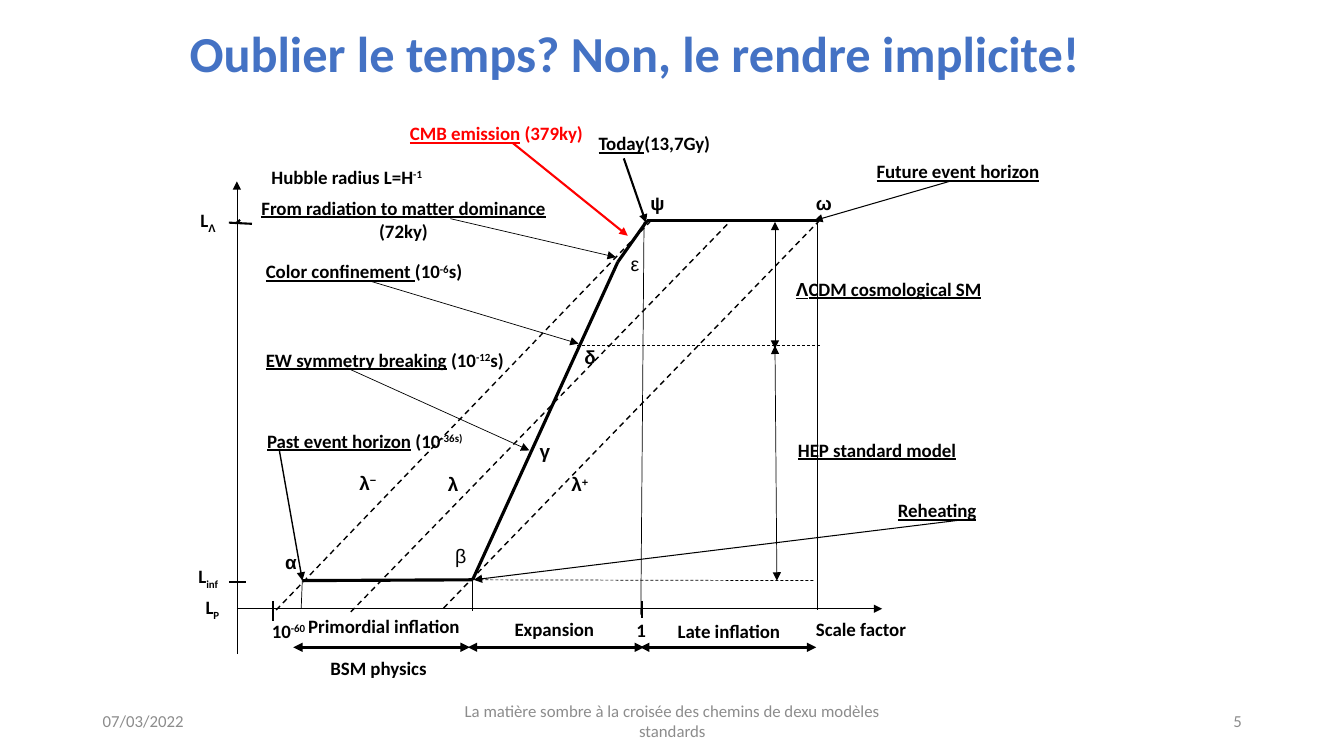
import pptx
import pptx.dml.color
import pptx.enum.dml
import pptx.enum.shapes
import pptx.enum.text
import pptx.oxml
import pptx.oxml.ns
import pptx.util

COLORS = {"ink": "000000", "title": "4472C4", "alert": "FF0000", "footer": "8C8C8C"}
UNIT = 2.54  # centimetres per layout unit
LEFT = pptx.enum.text.PP_ALIGN.LEFT
CENTER = pptx.enum.text.PP_ALIGN.CENTER
RIGHT = pptx.enum.text.PP_ALIGN.RIGHT
BASELINES = {"^": "30000", "_": "-25000"}


def length(value):
    return pptx.util.Cm(round(value * UNIT, 2))


def color(name):
    return pptx.dml.color.RGBColor.from_string(COLORS[name])


def add_runs(paragraph, runs, size, ink, bold):
    """Each run is (text, flags): u underlined, ^ raised, _ lowered, a Arial."""
    for text, flags in runs:
        run = paragraph.add_run()
        run.text = text
        run.font.name = "Arial" if "a" in flags else "Calibri"
        run.font.size = pptx.util.Pt(size)
        run.font.bold = bold
        run.font.color.rgb = color(ink)
        if "u" in flags:
            run.font.underline = True
        for mark, offset in BASELINES.items():
            if mark in flags:
                run._r.get_or_add_rPr().set("baseline", offset)


def add_text(slide, box, runs, align=LEFT, size=13.5, ink="ink", bold=True):
    shape = slide.shapes.add_textbox(*map(length, box))
    shape.text_frame.word_wrap = True
    paragraph = shape.text_frame.paragraphs[0]
    paragraph.alignment = align
    add_runs(paragraph, runs, size, ink, bold)
    return shape


def add_line(slide, box, start, end, width=0.5, ink="ink", heads="", dashed=False):
    """Heads: '>' puts an arrowhead at the end, '<>' at both ends."""
    left, top = box[:2]
    connector = slide.shapes.add_connector(
        pptx.enum.shapes.MSO_CONNECTOR.STRAIGHT,
        length(left + start[0]), length(top + start[1]),
        length(left + end[0]), length(top + end[1]))
    connector.line.color.rgb = color(ink)
    connector.line.width = pptx.util.Pt(width)
    if dashed:
        connector.line.dash_style = pptx.enum.dml.MSO_LINE.DASH
    line = connector.line._get_or_add_ln()
    for mark, tag in (("<", "a:headEnd"), (">", "a:tailEnd")):
        if mark in heads:
            line.append(pptx.oxml.parse_xml(
                f'<{tag} {pptx.oxml.ns.nsdecls("a")} type="triangle"/>'))
    connector._element.spPr.append(
        pptx.oxml.parse_xml(f'<a:effectLst {pptx.oxml.ns.nsdecls("a")}/>'))


def add_labels(slide, box, labels, align):
    for left, top, width, runs in labels:
        add_text(slide, (box[0] + left, box[1] + top, width, 0.33), runs, align)


def add_title(slide, box):
    title = slide.shapes.title
    title.left, title.top, title.width, title.height = map(length, box)
    title.text_frame.vertical_anchor = pptx.enum.text.MSO_ANCHOR.TOP
    paragraph = title.text_frame.paragraphs[0]
    paragraph.alignment = CENTER
    add_runs(paragraph, [("Oublier le temps? Non, le rendre implicite!", "")], 36, "title", True)


def add_axes(slide, box):
    add_line(slide, box, (1.35, 5.49), (1.35, 0.8), heads=">")
    add_line(slide, box, (1.35, 5.04), (7.75, 5.04), heads=">")
    # Ticks
    for start, end, width in [
        ((1.38, 1.18), (1.35, 1.21), 1.5),
        ((1.27, 1.21), (1.5, 1.22), 1.5),
        ((1.27, 4.77), (1.44, 4.77), 1.5),
        ((1.71, 4.96), (1.71, 5.16), 1),
        ((5.37, 4.96), (5.37, 5.13), 1.5),
    ]:
        add_line(slide, box, start, end, width)
    # Axis names and tick labels
    add_labels(slide, box, [
        (1.5, 0.59, 1.88, [("Hubble radius L=H", ""), ("-1", "^")]),
        (6.6, 5.08, 1.89, [("Scale factor", "")]),
        (4.53, 5.09, 1.66, [("1", "")]),
    ], CENTER)
    add_labels(slide, box, [
        (0.89, 1.02, 0.49, [("L", ""), ("Λ", "a_")]),
        (0.87, 4.55, 0.49, [("L", ""), ("inf", "_")]),
        (0.94, 4.86, 0.49, [("L", ""), ("P", "_")]),
        (1.6, 5.1, 0.91, [("10", ""), ("-60", "^")]),
    ], LEFT)


def add_curve(slide, box):
    alpha, beta, epsilon = (2, 4.76), (3.69, 4.75), (5.13, 1.6)
    psi, omega = (5.42, 1.19), (7.11, 1.19)
    corners = [alpha, beta, epsilon, psi, omega]
    for start, end in zip(corners, corners[1:]):
        add_line(slide, box, start, end, 2.25)
    # Wavelength diagonals
    for start, end in [((1.74, 5.05), (5.45, 1.2)), ((2.48, 5.07), (6.22, 1.22)),
                       ((3.4, 5.03), (7.13, 1.19))]:
        add_line(slide, box, start, end, 1, dashed=True)
    # Drop lines and levels
    for start, end in [((2, 4.74), (1.99, 5.04)), ((3.69, 4.72), (3.69, 5.06)),
                       ((5.39, 1.2), (5.36, 5.1)), ((7.11, 1.17), (7.11, 5.05))]:
        add_line(slide, box, start, end)
    for start, end in [((4.73, 2.43), (7.14, 2.43)), ((3.62, 4.75), (7.08, 4.76))]:
        add_line(slide, box, start, end, dashed=True)
    # Greek letters
    add_labels(slide, box, [
        (left, top, 0.37, [(letter, "a")]) for letter, left, top in [
            ("α", 1.7, 4.41), ("γ", 4.22, 3.31), ("δ", 4.67, 2.38),
            ("ψ", 5.34, 0.85), ("ω", 6.99, 0.85), ("λ", 3.31, 3.64)]
    ] + [
        (2.41, 3.63, 0.48, [("λ", "a"), ("−", "a^")]),
        (4.52, 3.64, 0.47, [("λ", "a"), ("+", "a^")]),
    ], CENTER)
    for letter, left, top in [("ε", 5.11, 1.45), ("β", 3.38, 4.35)]:
        add_text(slide, (box[0] + left, box[1] + top, 0.38, 0.34),
                 [(letter, "a")], CENTER, 14, bold=False)


def add_periods(slide, box):
    for start in (1.91, 3.64, 5.35):
        add_line(slide, box, (start, 5.42), (start + 1.75, 5.42), 2.25, heads="<>")
    add_labels(slide, box, [
        (1.91, 5.05, 1.8, [("Primordial inflation", "")]),
        (3.67, 5.08, 1.66, [("Expansion", "")]),
        (5.4, 5.1, 1.66, [("Late inflation", "")]),
        (2, 5.46, 1.51, [("BSM physics", "")]),
    ], CENTER)
    # Ranges of the two models
    add_line(slide, box, (6.69, 1.2), (6.69, 2.46), heads="<>")
    add_line(slide, box, (6.69, 2.43), (6.71, 4.76), heads="<>")
    add_labels(slide, box, [
        (6.8, 1.7, 2.22, [("Λ", "au"), ("CDM cosmological SM", "u")]),
        (6.82, 3.3, 1.9, [("HEP standard model", "u")]),
    ], LEFT)


def add_events(slide, box):
    add_labels(slide, box, [
        (1.55, 3.21, 2.18, [("Past event horizon", "u"), (" (10", ""), ("-36s)", "^")]),
        (1.54, 2.41, 2.8, [("EW symmetry breaking", "u"), (" (10", ""), ("-12", "^"), ("s)", "")]),
        (1.54, 1.53, 2.37, [("Color confinement ", "u"), ("(10", ""), ("-6", "^"), ("s)", "")]),
        (7.6, 0.54, 1.9, [("Future event horizon", "u")]),
        (7.81, 3.9, 1.9, [("Reheating", "u")]),
    ], LEFT)
    add_labels(slide, box, [
        (1.32, 0.9, 3.37, [("From radiation to matter dominance ", "u"), ("(72ky)", "")]),
        (4.66, 0.26, 1.66, [("Today", "u"), ("(13,7Gy)", "")]),
    ], CENTER)
    add_text(slide, (box[0] + 2.24, box[1] + 0.16, 3.37, 0.33),
             [("CMB emission", "u"), (" (379ky)", "")], CENTER, ink="alert")
    # Pointers from the labels to the curve
    for start, end, width, ink in [
        ((1.77, 3.47), (2, 4.76), 1, "ink"),
        ((2.44, 2.65), (4.25, 3.47), 0.5, "ink"),
        ((2.68, 1.79), (4.74, 2.41), 0.5, "ink"),
        ((3.47, 1.17), (5.11, 1.55), 0.5, "ink"),
        ((4.09, 0.42), (5.23, 1.34), 1.5, "alert"),
        ((5.19, 0.57), (5.41, 1.21), 1.5, "ink"),
        ((8.42, 0.8), (7.08, 1.19), 0.75, "ink"),
        ((8.51, 4.16), (3.7, 4.75), 0.75, "ink"),
    ]:
        add_line(slide, box, start, end, width, ink, ">")


def add_footer(slide, box):
    left, top, width, height = box
    for offset, part, text, align in [
        (0, 3, "07/03/2022", LEFT),
        (3.5, 4.5, "La matière sombre à la croisée des chemins de dexu modèles standards", CENTER),
        (width - 3, 3, "5", RIGHT),
    ]:
        shape = add_text(slide, (left + offset, top, part, height),
                         [(text, "")], align, 12, "footer", False)
        shape.text_frame.vertical_anchor = pptx.enum.text.MSO_ANCHOR.MIDDLE


def main():
    presentation = pptx.Presentation()
    presentation.slide_width = pptx.util.Cm(33.87)
    presentation.slide_height = pptx.util.Cm(19.05)
    slide = presentation.slides.add_slide(presentation.slide_layouts[5])
    add_title(slide, (0.24, 0.17, 12.12, 0.71))
    diagram = (1, 1, 9.5, 5.8)
    for add_part in (add_axes, add_curve, add_periods, add_events):
        add_part(slide, diagram)
    add_footer(slide, (0.92, 6.95, 11.5, 0.4))
    presentation.save("out.pptx")


if __name__ == "__main__":
    main()
